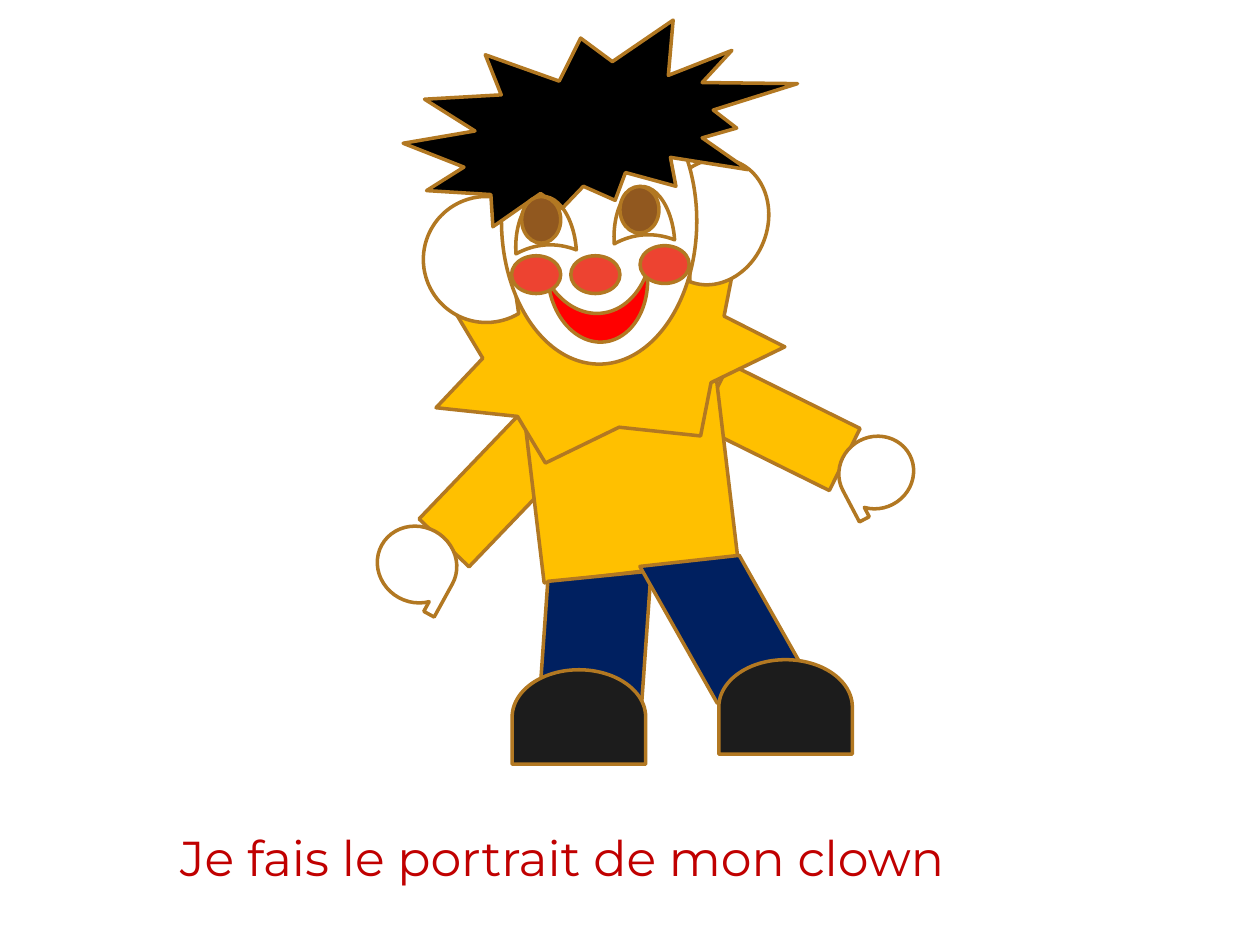
import pptx
import pptx.dml.color
import pptx.enum.shapes
import pptx.enum.text
import pptx.util

RGBColor = pptx.dml.color.RGBColor
Kind = pptx.enum.shapes.MSO_SHAPE

OUTLINE = RGBColor(0xB2, 0x78, 0x22)
YELLOW = RGBColor(0xFF, 0xC0, 0x00)
WHITE = RGBColor(0xFF, 0xFF, 0xFF)
BLACK = RGBColor(0x00, 0x00, 0x00)
LIP_RED = RGBColor(0xFF, 0x00, 0x00)
NOSE_RED = RGBColor(0xED, 0x43, 0x31)
BROWN = RGBColor(0x91, 0x58, 0x1F)
NAVY = RGBColor(0x00, 0x20, 0x60)
SHOE_BLACK = RGBColor(0x1C, 0x1C, 0x1C)
CAPTION_RED = RGBColor(0xC0, 0x00, 0x00)

SLIDE_WIDTH = pptx.util.Inches(10)
SLIDE_HEIGHT = pptx.util.Inches(7.5)
COLUMNS, ROWS = 1000, 750
COLUMN = SLIDE_WIDTH // COLUMNS
ROW = SLIDE_HEIGHT // ROWS


def add_part(slide, box, kind, cells, fill=None, turn=0, flips=()):
    left, top = box
    column, row, width, height = cells
    part = slide.shapes.add_shape(
        kind, (left + column) * COLUMN, (top + row) * ROW,
        width * COLUMN, height * ROW)
    part.rotation = turn
    part.shadow.inherit = False
    part.line.color.rgb = OUTLINE
    part.line.width = pptx.util.Pt(2)
    if fill is None:
        part.fill.background()
    else:
        part.fill.solid()
        part.fill.fore_color.rgb = fill
    for flip in flips:
        part.element.spPr.xfrm.set(flip, "1")
    return part


def add_torso(slide, box):
    for column, row, turn in ((251, 86, 296.3), (25, 136, 43.8)):
        add_part(slide, box, Kind.RECTANGLE, (column, row, 55, 116), YELLOW, turn)
    add_part(slide, box, Kind.RECTANGLE, (82, 101, 155, 158), YELLOW, 353.2)
    add_part(slide, box, Kind.STAR_7_POINT, (0, 0, 281, 163), YELLOW, 350.1)


def add_head(slide, box):
    add_part(slide, box, Kind.CHORD, (203, 109, 86, 102), WHITE, 201.3)
    add_part(slide, box, Kind.CHORD, (16, 140, 100, 100), WHITE, 14.1)
    add_part(slide, box, Kind.OVAL, (78, 46, 155, 227), WHITE)
    add_part(slide, box, Kind.EXPLOSION2, (0, 0, 313, 164), BLACK)
    mouth = add_part(slide, box, Kind.MOON, (131, 190, 52, 79), LIP_RED, 264.2)
    mouth.adjustments[0] = 0.44
    for column, row in ((90, 138), (168, 130)):
        eye = add_part(slide, box, Kind.MOON, (column, row, 44, 48), turn=86.2)
        eye.adjustments[0] = 0.875
        add_part(slide, box, Kind.OVAL, (column + 4, row + 2, 31, 37), BROWN)
    for column, row in ((133, 187), (86, 187), (188, 179)):
        add_part(slide, box, Kind.OVAL, (column, row, 39, 30), NOSE_RED)


def add_legs(slide, box):
    for cells, turn in (((0, 0, 103, 120), 354.3), ((80, 5, 156, 73), 60.5)):
        add_part(slide, box, Kind.FLOWCHART_DATA, cells, NAVY, turn)
    for column, row in ((2, 58), (166, 50)):
        add_part(slide, box, Kind.FLOWCHART_DELAY, (column, row, 75, 106),
                 SHOE_BLACK, 270)


def add_hands(slide, box):
    for cells, turn, flips in (
            ((0, 71, 60, 64), 118.8, ("flipV",)),
            ((366, 0, 57, 60), 242.3, ("flipH", "flipV"))):
        add_part(slide, box, Kind.FLOWCHART_SEQUENTIAL_ACCESS_STORAGE, cells,
                 WHITE, turn, flips)


def add_caption(slide, box):
    column, row, width, height = box
    caption = slide.shapes.title
    caption.left, caption.top = column * COLUMN, row * ROW
    caption.width, caption.height = width * COLUMN, height * ROW
    frame = caption.text_frame
    frame.word_wrap = False
    frame.auto_size = pptx.enum.text.MSO_AUTO_SIZE.NONE
    frame.vertical_anchor = pptx.enum.text.MSO_ANCHOR.TOP
    line = frame.paragraphs[0]
    line.alignment = pptx.enum.text.PP_ALIGN.LEFT
    words = line.add_run()
    words.text = "Je fais le portrait de mon clown"
    words.font.name = "Montserrat"
    words.font.size = pptx.util.Pt(28)
    words.font.color.rgb = CAPTION_RED


def main():
    deck = pptx.Presentation()
    deck.slide_width, deck.slide_height = SLIDE_WIDTH, SLIDE_HEIGHT
    slide = deck.slides.add_slide(deck.slide_layouts[5])
    add_torso(slide, (340, 195))
    add_head(slide, (320, 16))
    add_legs(slide, (420, 458))
    add_hands(slide, (301, 345))
    add_caption(slide, (133, 652, 702, 98))
    deck.save("out.pptx")


if __name__ == "__main__":
    main()
